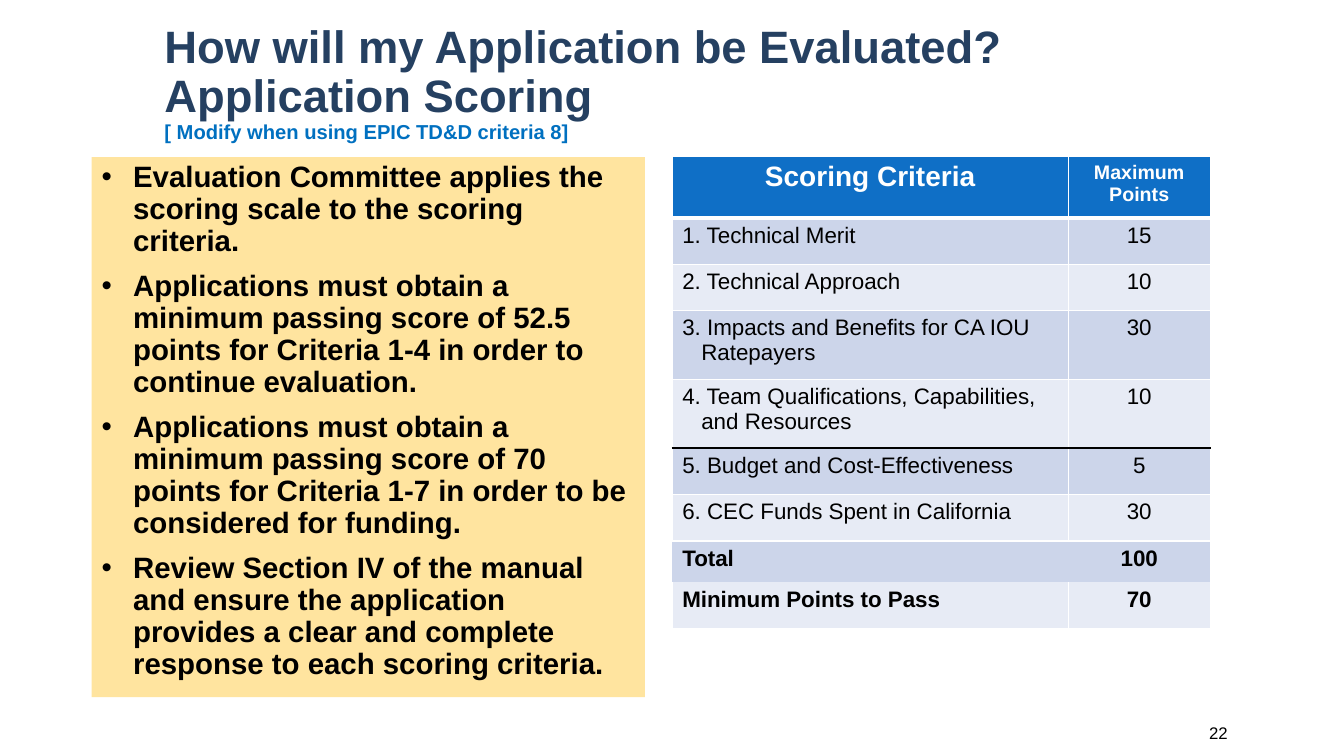
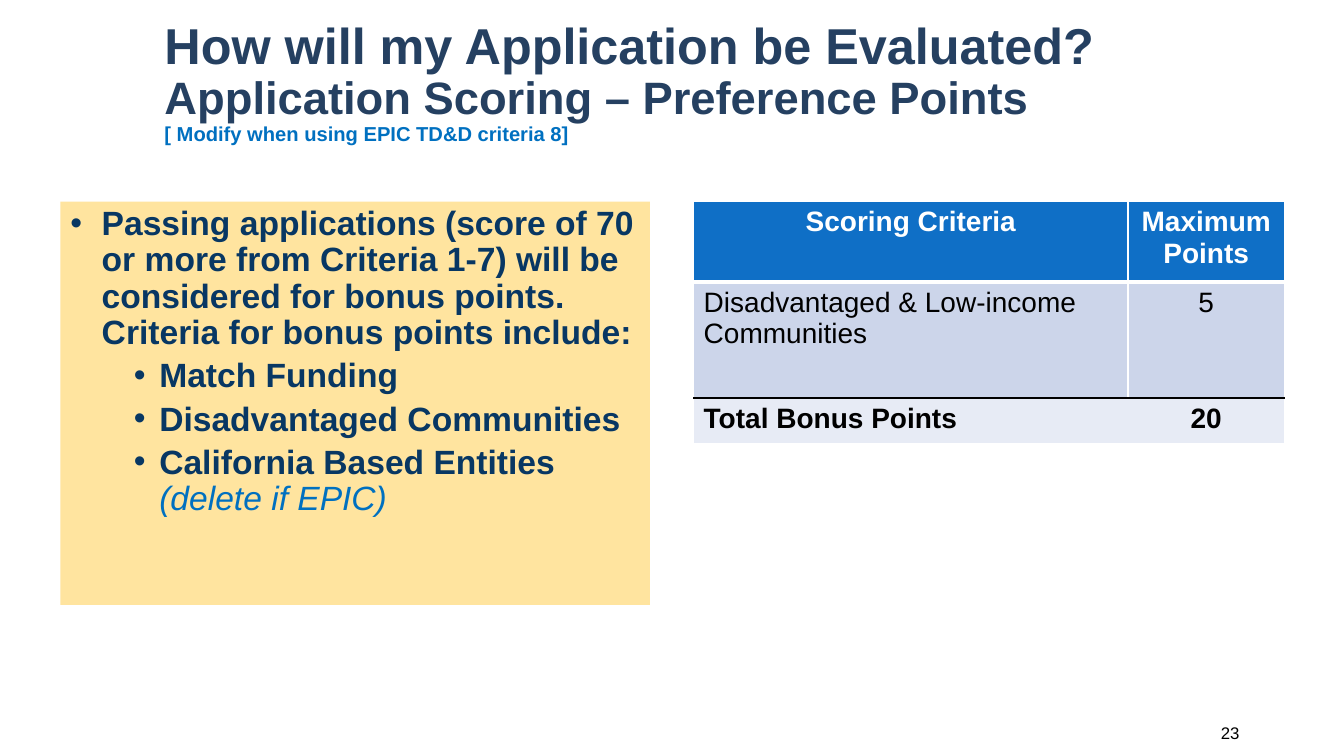
from dataclasses import dataclass
from lxml import etree
from pptx import Presentation
from pptx.dml.color import RGBColor
from pptx.enum.text import MSO_ANCHOR, MSO_AUTO_SIZE, PP_ALIGN
from pptx.oxml.ns import qn
from pptx.util import Cm, Pt

LEFT, MID, RIGHT = PP_ALIGN.LEFT, PP_ALIGN.CENTER, PP_ALIGN.RIGHT


@dataclass(frozen=True)
class Theme:
    font: str = "Arial"
    navy: str = "254061"
    deep: str = "083763"
    note: str = "0070C0"
    black: str = "000000"
    white: str = "FFFFFF"
    panel: str = "FFE49F"
    head: str = "0F6FC6"
    bands: tuple = ("CCD5EA", "E7EBF5")
    big: float = 36
    title: float = 32.4
    small: float = 14.4
    page: float = 12


T = Theme()

# Content: places and sizes in cm, text sizes in points
ASK = "How will my Application be Evaluated?"
HINT = ("[ Modify when using EPIC TD&D criteria 8]", T.small, T.note)
HEADS = ("Scoring Criteria", "Maximum Points")
TITLE = (3.89, 0.66, 27.66, 2.9)
# Level: left margin, indent, space before
LEVELS = ((0.79, -0.79, 10), (2.24, -0.64, 5))

SLIDES = [
    {
        "title": [(ASK, T.title, T.navy),
                  ("Application Scoring", T.title, T.navy), HINT],
        "panel": {
            "box": (2.31, 3.96, 13.94, 13.61), "size": 21, "color": T.black,
            "items": [
                (0, "Evaluation Committee applies the scoring scale to the "
                    "scoring criteria.", ""),
                (0, "Applications must obtain a minimum passing score of 52.5 "
                    "points for Criteria 1-4 in order to continue "
                    "evaluation.", ""),
                (0, "Applications must obtain a minimum passing score of 70 "
                    "points for Criteria 1-7 in order to be considered for "
                    "funding.", ""),
                (0, "Review Section IV of the manual and ensure the "
                    "application provides a clear and complete response to "
                    "each scoring criteria.", ""),
            ],
        },
        "table": {
            "at": (16.94, 3.94), "cols": (9.98, 3.58), "top": 1.55,
            "heads": (20, 14), "size": 16, "hang": 0.48,
            "rule": 5, "total": 7,
            "rows": [
                ("1. Technical Merit", 15, 1.17),
                ("2. Technical Approach", 10, 1.17),
                ("3. Impacts and Benefits for CA IOU Ratepayers", 30, 1.73),
                ("4. Team Qualifications, Capabilities, and Resources",
                 10, 1.73),
                ("5. Budget and Cost-Effectiveness", 5, 1.17),
                ("6. CEC Funds Spent in California", 30, 1.17),
                ("Total", 100, 1.04),
                ("Minimum Points to Pass", 70, 1.17),
            ],
        },
        "page": ("22", 26.29),
    },
    {
        "title": [(ASK, T.big, T.navy),
                  ("Application Scoring – Preference Points",
                   T.title, T.navy), HINT],
        "panel": {
            "box": (1.52, 5.08, 14.86, 10.16), "size": 24, "color": T.deep,
            "items": [
                (0, "Passing applications (score of 70 or more from Criteria "
                    "1-7) will be considered for bonus points. Criteria for "
                    "bonus points include:", ""),
                (1, "Match Funding", ""),
                (1, "Disadvantaged Communities", ""),
                (1, "California Based Entities ", "(delete if EPIC)"),
            ],
        },
        "table": {
            "at": (17.48, 5.08), "cols": (10.95, 3.94), "top": 2.03,
            "heads": (20, 20), "size": 20, "hang": 0,
            "rule": 2, "total": 2,
            "rows": [
                ("Disadvantaged & Low-income Communities", 5, 2.92),
                ("Total Bonus Points", 20, 1.14),
            ],
        },
        "page": ("23", 26.59),
    },
]


# Text helpers
def style(run, size, color, bold=False, slant=False):
    font = run.font
    font.name, font.size = T.font, Pt(size)
    font.bold, font.italic = bold, slant
    font.color.rgb = RGBColor.from_string(color)


def write(para, text, *look):
    run = para.add_run()
    run.text = text
    style(run, *look)


def lines(frame, count):
    """Yield the first paragraph, then new ones."""
    for i in range(count):
        yield frame.add_paragraph() if i else frame.paragraphs[0]


def indent(para, left, first):
    props = para._p.get_or_add_pPr()
    props.set("marL", str(Cm(left)))
    props.set("indent", str(Cm(first)))
    return props


def place(shape, box):
    shape.left, shape.top, shape.width, shape.height = map(Cm, box)
    frame = shape.text_frame
    frame.word_wrap, frame.auto_size = True, MSO_AUTO_SIZE.NONE
    return frame


# Slide parts
def add_title(slide, rows):
    frame = place(slide.shapes.title, TITLE)
    frame.vertical_anchor = MSO_ANCHOR.MIDDLE
    for para, (text, size, color) in zip(lines(frame, len(rows)), rows):
        para.alignment, para.line_spacing = LEFT, 0.9
        write(para, text, size, color, True)


def add_panel(slide, box, size, color, items):
    shape = slide.placeholders[1]
    frame = place(shape, box)
    frame.vertical_anchor = MSO_ANCHOR.TOP
    shape.fill.solid()
    shape.fill.fore_color.rgb = RGBColor.from_string(T.panel)
    for i, para in enumerate(lines(frame, len(items))):
        level, text, note = items[i]
        left, first, gap = LEVELS[level]
        props = indent(para, left, first)
        etree.SubElement(props, qn("a:buFont")).set("typeface", T.font)
        etree.SubElement(props, qn("a:buChar")).set("char", "•")
        para.level, para.line_spacing = level, 0.9
        para.space_before = Pt(gap if i else 0)
        write(para, text, size, color, True)
        if note:
            write(para, note, size, T.note, False, True)


def border(cell, side, line):
    """Draw one cell edge; line is (color, points) or None."""
    edge = etree.SubElement(cell._tc.get_or_add_tcPr(), qn("a:ln" + side))
    if line is None:
        etree.SubElement(edge, qn("a:noFill"))
        return
    color, width = line
    edge.set("w", str(Pt(width)))
    fill = etree.SubElement(edge, qn("a:solidFill"))
    etree.SubElement(fill, qn("a:srgbClr")).set("val", color)


def add_grid(slide, at, cols, top, heads, size, hang, rule, total, rows):
    data = [(*HEADS, top), *rows]
    high = [row[-1] for row in data]
    grid = slide.shapes.add_table(
        len(data), len(cols),
        *map(Cm, (*at, sum(cols), sum(high)))).table
    grid.first_row = grid.horz_banding = False
    for col, width in zip(grid.columns, cols):
        col.width = Cm(width)
    for row, height in zip(grid.rows, high):
        row.height = Cm(height)

    # Line above each row; the totals share one open block
    thin = (T.white, 1)
    above = {1: (T.white, 3), rule: (T.black, 1), total + 1: None}
    for r, row in enumerate(data):
        side = None if r == total else thin
        for c, text in enumerate(row[:-1]):
            cell = grid.cell(r, c)
            for name, line in (("L", side), ("R", side),
                               ("T", above.get(r, thin)),
                               ("B", above.get(r + 1, thin))):
                border(cell, name, line)
            cell.fill.solid()
            cell.fill.fore_color.rgb = RGBColor.from_string(
                T.bands[(r - 1) % 2] if r else T.head)
            para = cell.text_frame.paragraphs[0]
            para.alignment = LEFT if r and not c else MID
            if r and not c and hang:
                indent(para, hang, -hang)
            if r:
                write(para, str(text), size, T.black, r >= total)
            else:
                write(para, text, heads[c], T.white, True)


def add_page(slide, text, left):
    shape = slide.shapes.add_textbox(0, 0, 0, 0)
    frame = place(shape, (left, 17.96, 4.9, 1.02))
    frame.vertical_anchor = MSO_ANCHOR.MIDDLE
    para = frame.paragraphs[0]
    para.alignment = RIGHT
    write(para, text, T.page, T.black)


def main():
    deck = Presentation()
    deck.slide_width, deck.slide_height = Cm(33.87), Cm(19.05)
    for data in SLIDES:
        slide = deck.slides.add_slide(deck.slide_layouts[1])
        add_title(slide, data["title"])
        add_panel(slide, **data["panel"])
        add_grid(slide, **data["table"])
        add_page(slide, *data["page"])
    deck.save("out.pptx")


if __name__ == "__main__":
    main()
